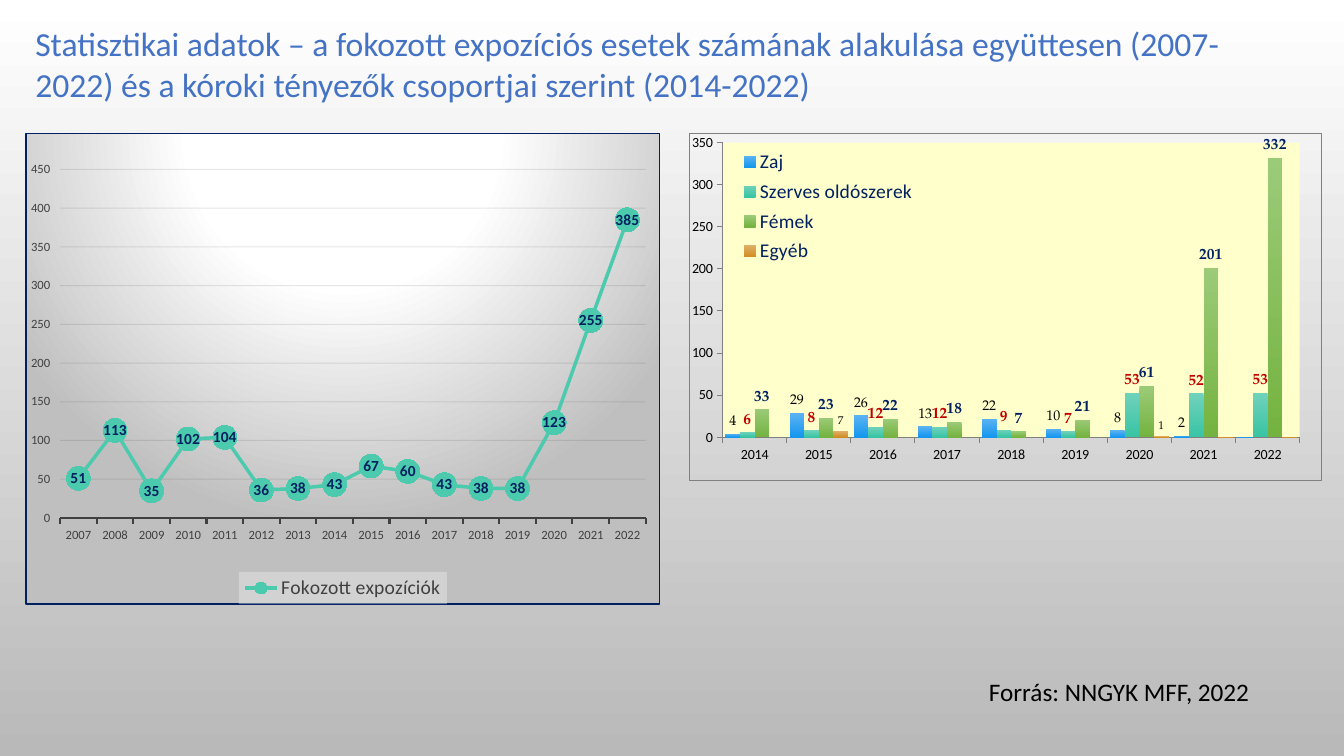
from lxml.etree import fromstring
from pptx import Presentation
from pptx.chart.data import CategoryChartData
from pptx.dml.color import RGBColor
from pptx.enum.chart import XL_CHART_TYPE, XL_LABEL_POSITION, XL_LEGEND_POSITION, XL_MARKER_STYLE, XL_TICK_MARK
from pptx.enum.text import MSO_ANCHOR, PP_ALIGN
from pptx.oxml.ns import nsdecls, qn
from pptx.util import Inches, Pt

TITLE = ("Statisztikai adatok – a fokozott expozíciós esetek számának alakulása "
         "együttesen (2007-2022) és a kóroki tényezők csoportjai szerint (2014-2022)")
SOURCE = "Forrás: NNGYK MFF, 2022"
EXPOSURES = ("Fokozott expozíciók",
             [51, 113, 35, 102, 104, 36, 38, 43, 67, 60, 43, 38, 38, 123, 255, 385])

BLACK = RGBColor(0, 0, 0)
WHITE = RGBColor(0xFF, 0xFF, 0xFF)
GREY = RGBColor(0xB9, 0xB9, 0xB9)
DARK = RGBColor(0x40, 0x40, 0x40)
MID = RGBColor(0x80, 0x80, 0x80)
BLUE = RGBColor(0x44, 0x72, 0xC4)
NAVY = RGBColor(0x00, 0x20, 0x60)
RED = RGBColor(0xC0, 0x00, 0x00)
TEAL = RGBColor(0x4B, 0xCA, 0xAD)

# name, values, top colour, bottom colour, label size, label colour, bold
FACTORS = [
    ("Zaj", [4, 29, 26, 13, 22, 10, 8, 2, 0],
     RGBColor(0x5C, 0xB3, 0xF2), RGBColor(0x14, 0x97, 0xEE), 10, BLACK, False),
    ("Szerves oldószerek", [6, 8, 12, 12, 9, 7, 53, 52, 53],
     RGBColor(0x70, 0xD2, 0xBB), RGBColor(0x38, 0xC4, 0xA4), 11, RED, True),
    ("Fémek", [33, 23, 22, 18, 7, 21, 61, 201, 332],
     RGBColor(0x9C, 0xCB, 0x78), RGBColor(0x74, 0xB3, 0x40), 11, NAVY, True),
    ("Egyéb ", [None, 7, None, None, None, None, 1, 0, 0],
     RGBColor(0xE0, 0xB0, 0x69), RGBColor(0xD2, 0x8D, 0x22), 8, BLACK, False),
]

SANS, SERIF = "Calibri", "TeX Gyre Pagella"
LINE_FILL = ('<a:gradFill><a:gsLst><a:gs pos="0"><a:srgbClr val="FFFFFF"/></a:gs>'
             '<a:gs pos="39000"><a:srgbClr val="FFFFFF"/></a:gs>'
             '<a:gs pos="100000"><a:srgbClr val="BFBFBF"/></a:gs></a:gsLst>'
             '<a:path path="circle"><a:fillToRect l="50000" t="-80000" r="50000" b="180000"/>'
             '</a:path></a:gradFill>')


def solid(color, alpha=100):
    return (f'<a:solidFill><a:srgbClr val="{color}"><a:alpha val="{alpha * 1000}"/>'
            '</a:srgbClr></a:solidFill>')


def shape_props(fill, line_color=None, line_pt=1):
    line = solid(line_color) if line_color else "<a:noFill/>"
    return fromstring(f'<c:spPr {nsdecls("c", "a")}>{fill}'
                      f'<a:ln w="{int(line_pt * 12700)}">{line}</a:ln></c:spPr>')


def manual_layout(box, inner=False):
    target = '<c:layoutTarget val="inner"/>' if inner else ""
    modes = '<c:xMode val="edge"/><c:yMode val="edge"/>'
    sizes = "".join(f'<c:{k} val="{v}"/>' for k, v in zip("xywh", box))
    return fromstring(f'<c:layout {nsdecls("c")}><c:manualLayout>{target}{modes}{sizes}'
                      '</c:manualLayout></c:layout>')


def set_font(font, size, color, name=SANS, bold=False):
    font.size, font.name, font.bold = Pt(size), name, bold
    font.color.rgb = color


def vertical_gradient(fill, top, bottom):
    fill.gradient()
    fill.gradient_angle = 270
    for stop, color in zip(fill.gradient_stops, (top, bottom)):
        stop.color.rgb = color


def label_values(series, position, size, color, name, bold):
    labels = series.data_labels
    labels.show_value = True
    labels.number_format, labels.number_format_is_linked = "0;;;", False  # zeros stay blank
    labels.position = position
    set_font(labels.font, size, color, name, bold)


def add_chart(s, kind, box, first_year, rows, font, axis_size, axis_color, top, plot,
              legend_at, legend_box, legend_color, area):
    data = CategoryChartData()
    data.categories = [str(first_year + i) for i in range(len(rows[0][1]))]
    for name, values, *_ in rows:
        data.add_series(name, values)
    chart = s.shapes.add_chart(kind, *map(Inches, box), data).chart
    chart.has_title = False
    set_font(chart.font, 10, BLACK, font)
    for axis in (chart.category_axis, chart.value_axis):
        axis.major_tick_mark, axis.minor_tick_mark = XL_TICK_MARK.OUTSIDE, XL_TICK_MARK.NONE
        set_font(axis.tick_labels.font, axis_size, axis_color)
        axis.format.line.color.rgb = MID
        axis.format.line.width = Pt(0.75)
    axis = chart.value_axis
    axis.minimum_scale, axis.maximum_scale, axis.major_unit = 0, top, 50
    axis.has_major_gridlines = False

    chart.has_legend = True
    legend = chart.legend
    legend.position, legend.include_in_layout = legend_at, False
    set_font(legend.font, 14, legend_color)
    legend._element.find(qn("c:legendPos")).addnext(manual_layout(legend_box))

    space = chart._chartSpace
    space.find(qn("c:chart")).addnext(area)
    plot_area = space.find(".//" + qn("c:plotArea"))
    for old in plot_area.findall(qn("c:layout")):
        plot_area.remove(old)
    plot_area.insert(0, manual_layout(plot, inner=True))
    chart.plots[0].vary_by_categories = False
    return chart


def add_line_chart(s):
    chart = add_chart(s, XL_CHART_TYPE.LINE_MARKERS, (0.25, 1.32, 6.3, 4.68), 2007,
                      [EXPOSURES], SANS, 9, DARK, 450, (0.054, 0.076, 0.924, 0.741),
                      XL_LEGEND_POSITION.BOTTOM, (0.335, 0.93, 0.33, 0.07), DARK,
                      shape_props(LINE_FILL, NAVY))
    chart.category_axis.format.line.color.rgb = DARK
    chart.category_axis.format.line.width = Pt(1.5)
    axis = chart.value_axis
    axis.format.line.fill.background()
    axis.has_major_gridlines = True
    axis.major_gridlines._xAx.find(qn("c:majorGridlines")).append(fromstring(
        f'<c:spPr {nsdecls("c", "a")}><a:ln w="9525">{solid("0D0D0D", 10)}</a:ln></c:spPr>'))
    legend = chart.legend._element
    legend.find(qn("c:overlay")).addnext(shape_props(solid("F2F2F2", 39)))

    series = chart.plots[0].series[0]
    series.smooth = False
    series.format.line.color.rgb = TEAL
    series.format.line.width = Pt(2.5)
    marker = series.marker
    marker.style, marker.size = XL_MARKER_STYLE.CIRCLE, 17
    marker.format.fill.solid()
    marker.format.fill.fore_color.rgb = TEAL
    marker.format.line.fill.background()
    label_values(series, XL_LABEL_POSITION.CENTER, 11, NAVY, SANS, True)


def add_factor_chart(s):
    chart = add_chart(s, XL_CHART_TYPE.COLUMN_CLUSTERED, (6.83, 1.32, 6.28, 3.45), 2014,
                      FACTORS, SERIF, 10, BLACK, 350, (0.053, 0.026, 0.913, 0.85),
                      XL_LEGEND_POSITION.RIGHT, (0.07, 0.03, 0.3, 0.36), NAVY,
                      shape_props("<a:noFill/>", MID, 0.75))
    chart._chartSpace.find(".//" + qn("c:plotArea")).append(shape_props(solid("FFFFCC")))
    plot = chart.plots[0]
    plot.gap_width, plot.overlap = 38, 0
    for series, (_, _, top, bottom, size, color, bold) in zip(plot.series, FACTORS):
        vertical_gradient(series.format.fill, top, bottom)
        label_values(series, XL_LABEL_POSITION.OUTSIDE_END, size, color, SERIF, bold)


def write(tf, text, size, color):
    p = tf.paragraphs[0]
    p.alignment = PP_ALIGN.LEFT
    r = p.add_run()
    r.text = text
    set_font(r.font, size, color)


def main():
    prs = Presentation()
    prs.slide_width, prs.slide_height = Inches(13.33), Inches(7.5)
    s = prs.slides.add_slide(prs.slide_layouts[5])
    vertical_gradient(s.background.fill, WHITE, GREY)

    title = s.shapes.title
    title.left, title.top, title.width, title.height = map(Inches, (0.25, 0.18, 12.13, 0.91))
    title.text_frame.vertical_anchor = MSO_ANCHOR.TOP
    write(title.text_frame, TITLE, 24, BLUE)
    add_line_chart(s)
    add_factor_chart(s)
    source = s.shapes.add_textbox(*map(Inches, (9.71, 6.66, 2.9, 0.4)))
    source.text_frame.word_wrap = False
    write(source.text_frame, SOURCE, 18, BLACK)
    prs.save("out.pptx")


if __name__ == "__main__":
    main()
